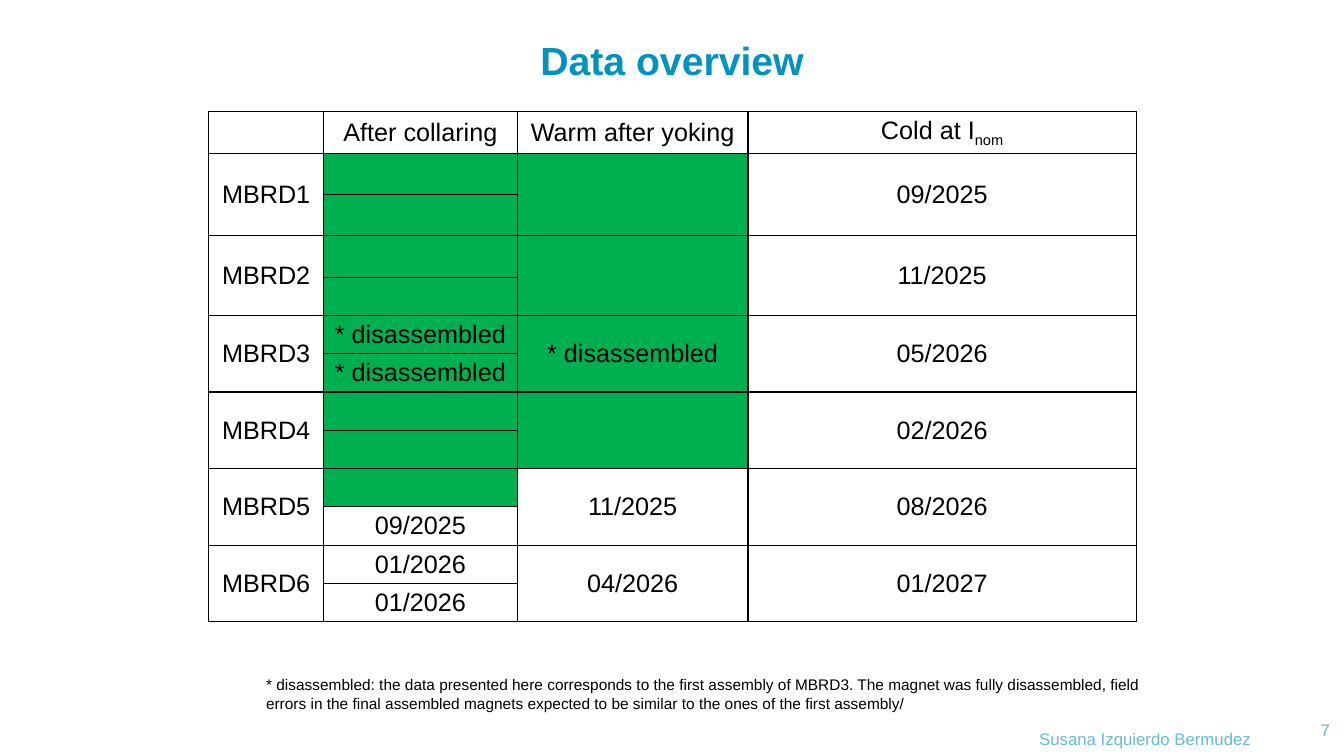
from lxml.etree import SubElement
from pptx import Presentation
from pptx.dml.color import RGBColor
from pptx.enum.text import MSO_ANCHOR as Anchor, PP_ALIGN as Align
from pptx.oxml.ns import qn
from pptx.util import Inches, Pt

BLUE = RGBColor(0x00, 0x93, 0xBE)
PALE = RGBColor(0x64, 0xBC, 0xD9)
GREEN = RGBColor(0x00, 0xB0, 0x50)
BLACK = RGBColor(0, 0, 0)

HEADS = ["", "After collaring", "Warm after yoking", "Cold at I"]
APART = "* disassembled"
# Magnet, two collared apertures, yoking, cold test; no date means done
MAGNETS = [
    ("MBRD1", "", "", "", "09/2025"),
    ("MBRD2", "", "", "", "11/2025"),
    ("MBRD3", APART, APART, APART, "05/2026"),
    ("MBRD4", "", "", "", "02/2026"),
    ("MBRD5", "", "09/2025", "11/2025", "08/2026"),
    ("MBRD6", "01/2026", "01/2026", "04/2026", "01/2027"),
]
WIDTHS = [1.14, 1.92, 2.29, 3.85]
HEIGHTS = [0.41] * 4 + [0.38] * 9
NOTE = ("* disassembled: the data presented here corresponds to the first "
        "assembly of MBRD3. The magnet was fully disassembled, field errors "
        "in the final assembled magnets expected to be similar to the ones "
        "of the first assembly/")


def style(para, size, color, align=Align.LEFT, bold=False):
    para.alignment = align
    for run in para.runs:
        font = run.font
        font.name, font.size, font.bold = "Arial", Pt(size), bold
        font.color.rgb = color


def clear_insets(frame):
    frame.margin_left = frame.margin_right = 0
    frame.margin_top = frame.margin_bottom = 0


def add_title(slide, text, box):
    title = slide.shapes.title
    title.left, title.top, title.width, title.height = map(Inches, box)
    frame = title.text_frame
    frame.text = text
    frame.vertical_anchor = Anchor.MIDDLE
    clear_insets(frame)
    style(frame.paragraphs[0], 28, BLUE, Align.CENTER, True)


def add_text(slide, text, box, size, color):
    frame = slide.shapes.add_textbox(*map(Inches, box)).text_frame
    frame.word_wrap = True
    frame.text = text
    style(frame.paragraphs[0], size, color)
    return frame


def add_footer(slide, text, box):
    frame = add_text(slide, text, box, 12, PALE)
    frame.vertical_anchor = Anchor.BOTTOM
    clear_insets(frame)
    frame.paragraphs[0].alignment = Align.RIGHT


def add_borders(cell):
    props = cell._tc.get_or_add_tcPr()
    for side in ("lnL", "lnR", "lnT", "lnB"):
        line = SubElement(props, qn(f"a:{side}"), w=str(Pt(1)))
        fill = SubElement(line, qn("a:solidFill"))
        SubElement(fill, qn("a:srgbClr"), val=str(BLACK))


def fill_cell(cell, text, done=False):
    cell.text = text
    cell.vertical_anchor = Anchor.MIDDLE
    cell.margin_top = cell.margin_bottom = Inches(0.03)
    para = cell.text_frame.paragraphs[0]
    para.font.size = Pt(18)
    style(para, 18, BLACK, Align.CENTER)
    if done:
        cell.fill.solid()
        cell.fill.fore_color.rgb = GREEN
    else:
        cell.fill.background()


def add_schedule(slide, left, top):
    frame = slide.shapes.add_table(
        len(HEIGHTS), len(WIDTHS), Inches(left), Inches(top),
        Inches(sum(WIDTHS)), Inches(sum(HEIGHTS)))
    table = frame.table
    table.first_row = table.horz_banding = False
    for col, width in zip(table.columns, WIDTHS):
        col.width = Inches(width)
    for row, height in zip(table.rows, HEIGHTS):
        row.height = Inches(height)
    for cell in table.iter_cells():
        add_borders(cell)
        fill_cell(cell, "")

    for col, head in enumerate(HEADS):
        fill_cell(table.cell(0, col), head)
    para = table.cell(0, 3).text_frame.paragraphs[0]
    sub = para.add_run()
    sub.text = "nom"
    style(para, 18, BLACK, Align.CENTER)
    sub.font._element.set("baseline", "-25000")

    for i, (name, first, second, yoke, cold) in enumerate(MAGNETS):
        row = 1 + 2 * i
        for col in (0, 2, 3):
            table.cell(row, col).merge(table.cell(row + 1, col))
        fill_cell(table.cell(row, 0), name)
        fill_cell(table.cell(row, 3), cold)
        for step, col, text in ((0, 1, first), (1, 1, second), (0, 2, yoke)):
            fill_cell(table.cell(row + step, col), text, "/" not in text)


def main():
    deck = Presentation()
    deck.slide_width, deck.slide_height = Inches(13.33), Inches(7.5)
    slide = deck.slides.add_slide(deck.slide_layouts[5])
    add_title(slide, "Data overview", (0.89, 0.2, 11.55, 0.79))
    add_schedule(slide, 2.07, 1.11)
    add_footer(slide, "Susana Izquierdo Bermudez", (2.75, 6.95, 9.66, 0.48))
    add_footer(slide, "7", (12.67, 6.95, 0.52, 0.39))
    add_text(slide, NOTE, (2.54, 6.65, 9.21, 0.47), 11, BLACK)
    deck.save("out.pptx")


if __name__ == "__main__":
    main()
